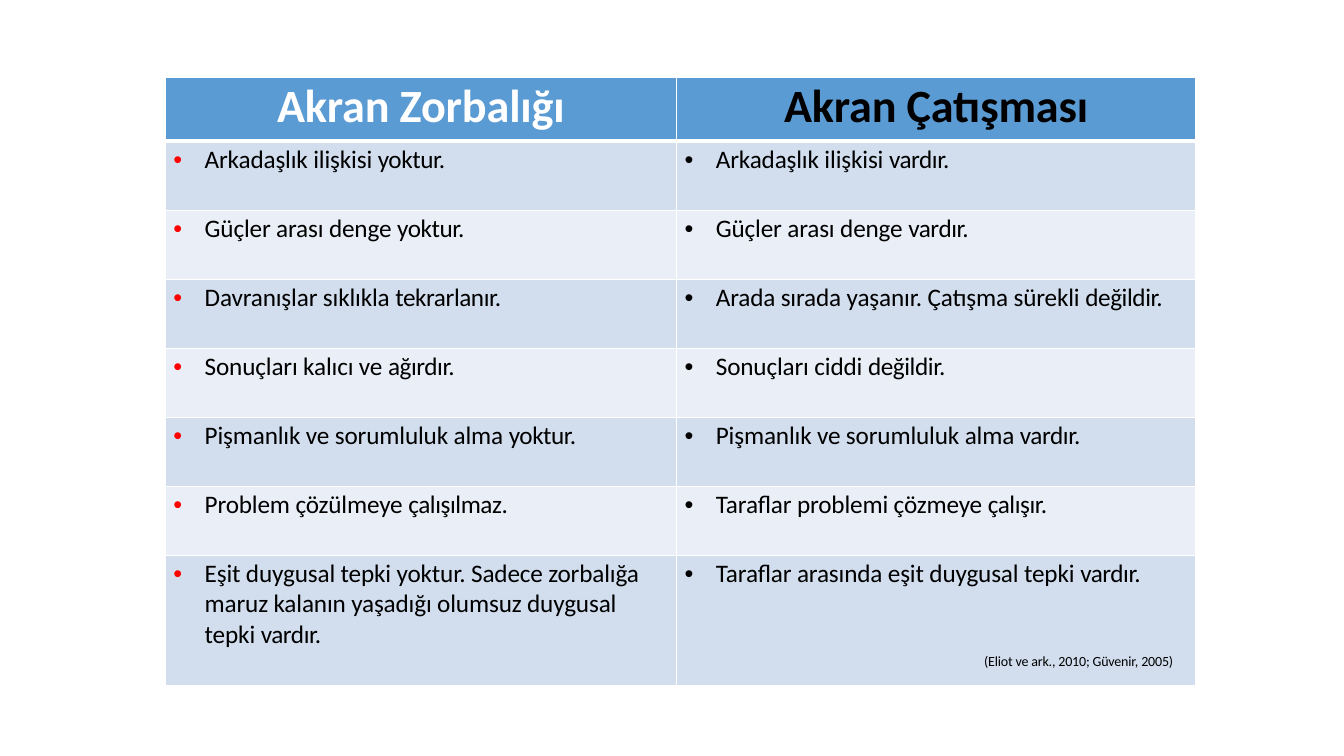
from dataclasses import dataclass

from lxml.etree import SubElement
from pptx import Presentation
from pptx.dml.color import RGBColor as RGB
from pptx.enum.text import PP_ALIGN as Align
from pptx.oxml.ns import qn
from pptx.util import Inches, Pt


@dataclass(frozen=True)
class Theme:
    font: str = "Calibri"
    white: str = "FFFFFF"
    black: str = "000000"
    red: str = "FF0000"
    header: str = "5B9BD4"
    bands: tuple = ("D2DEEE", "EAEEF7")
    title_size: int = 33
    body_size: int = 18
    source_size: int = 10


T = Theme()

HEADINGS = [("Akran Zorbalığı", T.white), ("Akran Çatışması", T.black)]
BULLET_COLORS = [T.red, T.black]
COMPARISONS = [
    ("Arkadaşlık ilişkisi yoktur.", "Arkadaşlık ilişkisi vardır."),
    ("Güçler arası denge yoktur.", "Güçler arası denge vardır."),
    ("Davranışlar sıklıkla tekrarlanır.",
     "Arada sırada yaşanır. Çatışma sürekli değildir."),
    ("Sonuçları kalıcı ve ağırdır.", "Sonuçları ciddi değildir."),
    ("Pişmanlık ve sorumluluk alma yoktur.",
     "Pişmanlık ve sorumluluk alma vardır."),
    ("Problem çözülmeye çalışılmaz.", "Taraflar problemi çözmeye çalışır."),
    ("Eşit duygusal tepki yoktur. Sadece zorbalığa maruz kalanın yaşadığı "
     "olumsuz duygusal tepki vardır.",
     "Taraflar arasında eşit duygusal tepki vardır."),
]
SOURCE = "(Eliot ve ark., 2010; Güvenir, 2005)"

COL_WIDTHS = [5.07, 5.15]
ROW_HEIGHTS = [0.63] + [4.11 / 6] * 6 + [1.29]


def style_run(r, size, color, bold=False, spacing=-0.1):
    r.font.name = T.font
    r.font.size = Pt(size)
    r.font.bold = bold
    r.font.color.rgb = RGB.from_string(color)
    r._r.get_or_add_rPr().set("spc", str(round(spacing * 100)))


def style_cell(cell, fill, top=1, bottom=1, inset_top=0.01, inset_right=0.0):
    cell.margin_left = cell.margin_bottom = 0
    cell.margin_top = Inches(inset_top)
    cell.margin_right = Inches(inset_right)
    tcPr = cell._tc.get_or_add_tcPr()
    for side, width in (("L", 1), ("R", 1), ("T", top), ("B", bottom)):
        ln = SubElement(tcPr, qn(f"a:ln{side}"), w=str(Pt(width)))
        solid = SubElement(ln, qn("a:solidFill"))
        SubElement(solid, qn("a:srgbClr"), val=T.white)
    cell.fill.solid()
    cell.fill.fore_color.rgb = RGB.from_string(fill)


def set_indent(p, left, first=0.0):
    pPr = p._p.get_or_add_pPr()
    pPr.set("marL", str(Inches(left)))
    pPr.set("indent", str(Inches(first)))
    return pPr


def fill_heading(cell, text, color):
    style_cell(cell, T.header, bottom=3)
    p = cell.text_frame.paragraphs[0]
    p.text = text
    p.alignment = Align.CENTER
    style_run(p.runs[0], T.title_size, color, bold=True)


def fill_bullet(cell, text, bullet_color, band, top):
    style_cell(cell, band, top=top, inset_top=0.03, inset_right=0.1)
    p = cell.text_frame.paragraphs[0]
    pPr = set_indent(p, 0.39, -0.31)
    color = SubElement(pPr, qn("a:buClr"))
    SubElement(color, qn("a:srgbClr"), val=bullet_color)
    SubElement(pPr, qn("a:buFont"), typeface="Arial")
    SubElement(pPr, qn("a:buChar"), char="•")
    # The closing word is set tighter than the rest
    start, space, last = text.rpartition(" ")
    for part, spacing in ((start + space, -0.1), (last, -0.3)):
        r = p.add_run()
        r.text = part
        style_run(r, T.body_size, T.black, spacing=spacing)


def add_source(cell):
    p = cell.text_frame.add_paragraph()
    p.text = SOURCE
    p.space_before = Pt(46)
    set_indent(p, 3.05)
    style_run(p.runs[0], T.source_size, T.black)


def add_comparison_table(s):
    table = s.shapes.add_table(
        len(ROW_HEIGHTS), len(COL_WIDTHS), Inches(1.64), Inches(0.77),
        Inches(sum(COL_WIDTHS)), Inches(sum(ROW_HEIGHTS))).table
    for col, width in zip(table.columns, COL_WIDTHS):
        col.width = Inches(width)
    for row, height in zip(table.rows, ROW_HEIGHTS):
        row.height = Inches(height)

    # Heading row
    for j, (text, color) in enumerate(HEADINGS):
        fill_heading(table.cell(0, j), text, color)

    # Banded comparison rows
    for i, texts in enumerate(COMPARISONS):
        for j, text in enumerate(texts):
            fill_bullet(table.cell(i + 1, j), text, BULLET_COLORS[j],
                        T.bands[i % 2], top=3 if i == 0 else 1)

    # Source note under the last comparison
    add_source(table.cell(len(COMPARISONS), 1))


def main():
    prs = Presentation()
    prs.slide_width, prs.slide_height = Inches(13.33), Inches(7.5)
    s = prs.slides.add_slide(prs.slide_layouts[6])
    add_comparison_table(s)
    prs.save("out.pptx")


if __name__ == "__main__":
    main()
